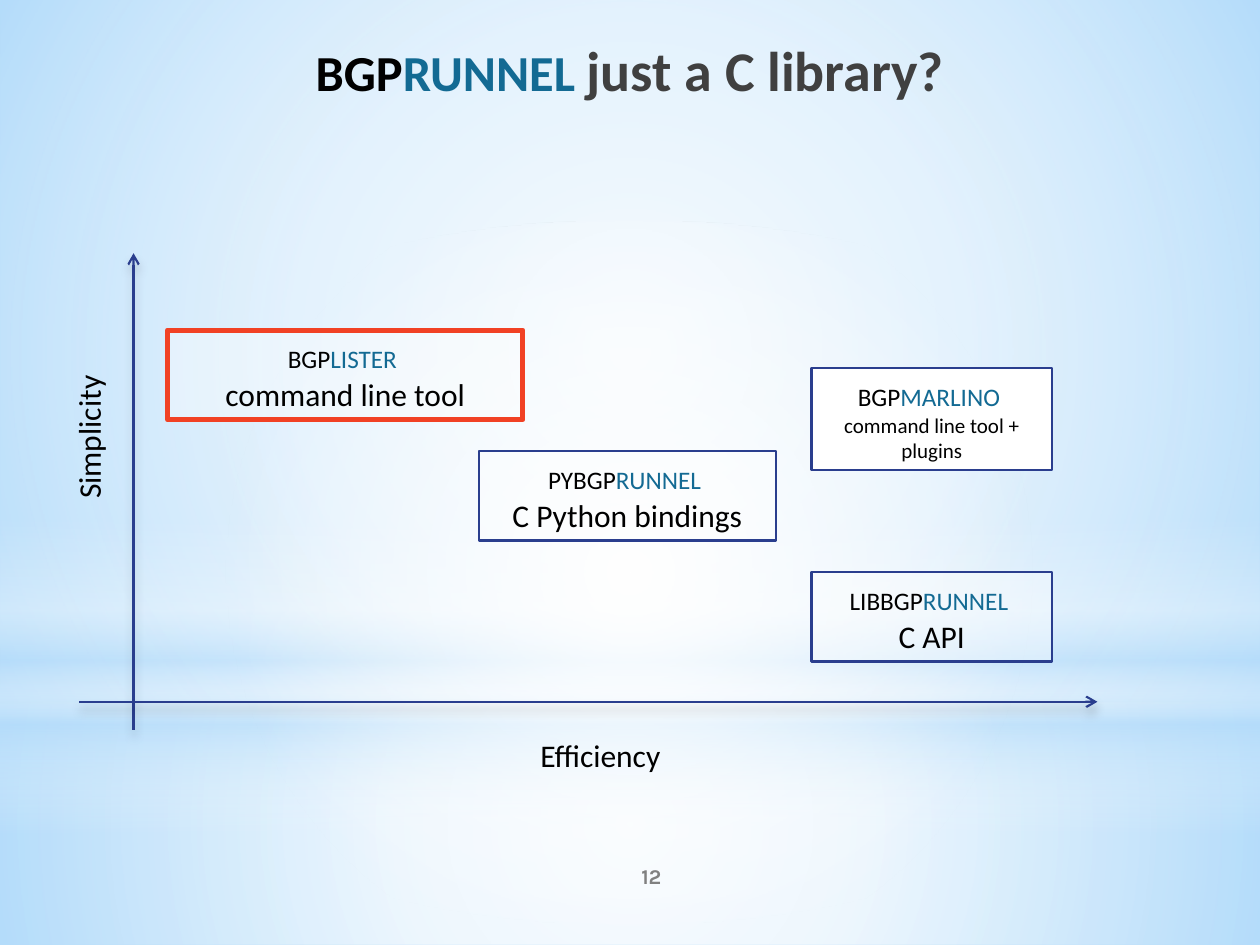
from lxml import etree
from pptx import Presentation, util as u
from pptx.dml.color import RGBColor
from pptx.enum import shapes, text
from pptx.oxml import parse_xml
from pptx.oxml.ns import nsdecls, qn

COLS, ROWS = 100, 75
BLACK, TEAL, NAVY, RED = "000000", "136A93", "2A3E8E", "F14124"
WHITE, SKY = "FFFFFF", "B4DCFA"
ROUND = ('<a:path path="circle"><a:fillToRect l="50000" t="50000" '
         'r="50000" b="50000"/></a:path>')
DOWN = '<a:lin ang="5400000" scaled="0"/>'

prs = Presentation()
prs.slide_width, prs.slide_height = u.Inches(10), u.Inches(7.5)


def grid(x, y, *size):
    """Turn columns and rows into slide lengths."""
    steps = (prs.slide_width / COLS, prs.slide_height / ROWS) * 2
    return [int(n * step) for n, step in zip((x, y, *size), steps)]


def rgb(value):
    return RGBColor.from_string(value)


def add_run(p, words, size=18, color=BLACK, font="Calibri", bold=False, caps=False):
    r = p.add_run()
    r.text = words
    r.font.size, r.font.name, r.font.bold = u.Pt(size), font, bold
    r.font.color.rgb = rgb(color)
    if caps:
        r.font._element.set("cap", "small")
    p.alignment = text.PP_ALIGN.CENTER


def add_name(p, start, end, **fmt):
    """A two-coloured name in small capitals."""
    add_run(p, start, caps=True, **fmt)
    add_run(p, end + " ", color=TEAL, caps=True, **fmt)


def glow(s, box, kind, stops, direction=ROUND):
    """A borderless shape with a translucent gradient of (place, colour, opacity)."""
    sp = s.shapes.add_shape(kind, *grid(*box))
    sp.shadow.inherit = False
    sp.line.fill.background()
    marks = "".join(
        f'<a:gs pos="{place * 1000}"><a:srgbClr val="{color}">'
        f'<a:alpha val="{alpha * 1000}"/></a:srgbClr></a:gs>'
        for place, color, alpha in stops)
    sp._element.spPr.find(qn("a:prstGeom")).addnext(parse_xml(
        f'<a:gradFill {nsdecls("a")} rotWithShape="1">'
        f'<a:gsLst>{marks}</a:gsLst>{direction}</a:gradFill>'))


def backdrop(s):
    s.background.fill.solid()
    s.background.fill.fore_color.rgb = rgb(SKY)
    rect, oval = shapes.MSO_SHAPE.RECTANGLE, shapes.MSO_SHAPE.OVAL
    glow(s, (0, 55.8, COLS, 19.2), rect,
         [(0, WHITE, 91), (37, WHITE, 76), (100, SKY, 79)])
    glow(s, (0, 0, COLS, 55.8), rect,
         [(0, WHITE, 89), (48, WHITE, 62), (100, SKY, 79)])
    glow(s, (0, 41.2, COLS, 25), rect,
         [(0, WHITE, 0), (29, WHITE, 30), (45, SKY, 40),
          (55, WHITE, 26), (65, SKY, 60), (100, WHITE, 0)], DOWN)
    glow(s, (0, 17.5, COLS, 55.8), oval, [(0, WHITE, 100), (56, WHITE, 0)])


def heading(s, box):
    sp = s.shapes.title
    s.shapes._spTree.append(sp._element)  # bring in front of the backdrop
    sp.left, sp.top, sp.width, sp.height = grid(*box)
    tf = sp.text_frame
    tf.margin_top = 0
    tf.margin_bottom = u.Pt(6)
    tf.vertical_anchor = text.MSO_ANCHOR.MIDDLE
    p = tf.paragraphs[0]
    add_name(p, "bgp", "runnel", size=36, bold=True)
    add_run(p, "just a C library?", size=32, color="404040", bold=True)


def label(s, box, words, turn=0, **fmt):
    sp = s.shapes.add_textbox(*grid(*box))
    sp.rotation = turn
    tf = sp.text_frame
    tf.word_wrap = False
    tf.vertical_anchor = text.MSO_ANCHOR.MIDDLE
    add_run(tf.paragraphs[0], words, **fmt)


def tool_box(s, box, start, end, role, size=18, line=NAVY, weight=1.25, opacity=36):
    sp = s.shapes.add_shape(shapes.MSO_SHAPE.RECTANGLE, *grid(*box))
    sp.shadow.inherit = False
    sp.fill.solid()
    sp.fill.fore_color.rgb = rgb(WHITE)
    color = sp._element.spPr.find(qn("a:solidFill"))[0]
    etree.SubElement(color, qn("a:alpha"), val=str(opacity * 1000))
    sp.line.color.rgb, sp.line.width = rgb(line), u.Pt(weight)
    tf = sp.text_frame
    tf.word_wrap = True
    tf.auto_size = text.MSO_AUTO_SIZE.SHAPE_TO_FIT_TEXT
    tf.vertical_anchor = text.MSO_ANCHOR.MIDDLE
    add_name(tf.paragraphs[0], start, end)
    add_run(tf.add_paragraph(), role, size=size)


def axis(s, start, end):
    sp = s.shapes.add_connector(shapes.MSO_CONNECTOR.STRAIGHT,
                                *grid(*start), *grid(*end))
    sp.line.color.rgb, sp.line.width = rgb(NAVY), u.Pt(1.25)
    etree.SubElement(sp.line._get_or_add_ln(), qn("a:tailEnd"), type="arrow")
    sp._element.spPr.append(parse_xml(
        f'<a:effectLst {nsdecls("a")}><a:outerShdw blurRad="{u.Pt(5)}" '
        f'dist="{u.Pt(4)}" dir="5400000" rotWithShape="0"><a:srgbClr val="{BLACK}">'
        '<a:alpha val="20000"/></a:srgbClr></a:outerShdw></a:effectLst>'))


def trade_off(s, x, y, w, h):
    """Tools placed by efficiency and simplicity, between two axes."""
    right, bottom = x + w, y + h
    far = x + 58.1  # column shared by the two most efficient tools
    tool_box(s, (far, y + 25.3, 19.1, 7.1), "libbgp", "runnel", "C API")
    tool_box(s, (x + 31.7, y + 15.7, 23.6, 7.1), "pybgp", "runnel",
             "C Python bindings")
    tool_box(s, (x + 7, y + 6.1, 28.2, 7.1), "bgp", "lister",
             "command line tool", line=RED, weight=3)
    tool_box(s, (far, y + 9.1, 19.1, 8.1), "bgp", "marlino",
             "command line tool + plugins", size=12, opacity=100)
    label(s, (x + 35, bottom, 12.7, 4), "Efficiency")
    label(s, (x - 5.7, y + 12.6, 12.8, 4), "Simplicity", turn=270)
    axis(s, (x + 4.3, bottom), (x + 4.3, y))
    axis(s, (x, bottom - 2.2), (right, bottom - 2.2))


def main():
    s = prs.slides.add_slide(prs.slide_layouts[5])
    backdrop(s)
    heading(s, (5, 1.7, 90, 7.9))
    # Slide number
    label(s, (41.7, 67.5, 20, 4), "12", size=12, color="808080",
          font="Karla", bold=True)
    trade_off(s, 6.3, 20.1, 80.8, 37.8)
    prs.save("out.pptx")


if __name__ == "__main__":
    main()
